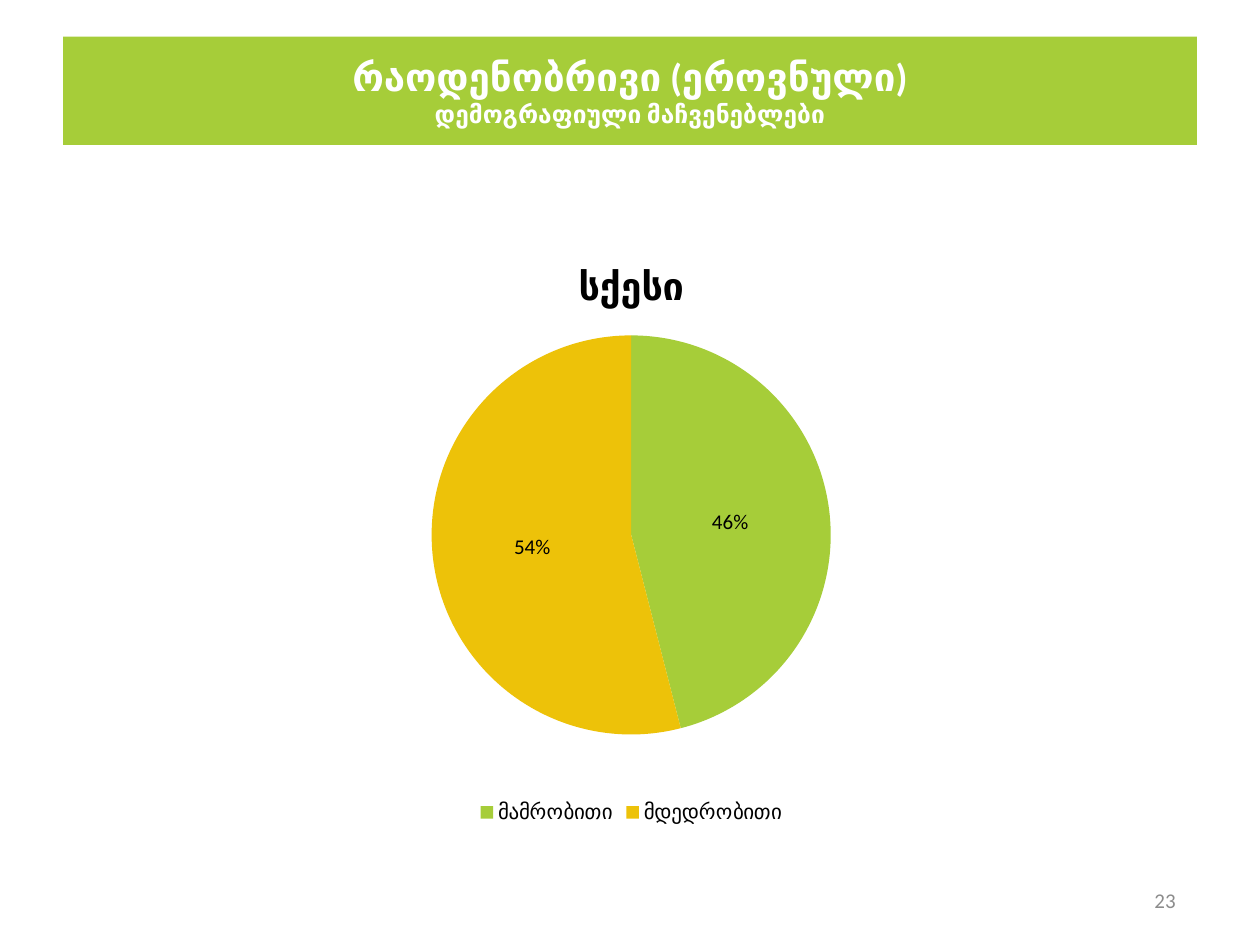
"""Build the slide showing the sex breakdown of the national survey."""
from dataclasses import dataclass

from lxml import etree
from pptx import Presentation
from pptx.chart.data import CategoryChartData
from pptx.dml.color import RGBColor
from pptx.enum import chart as ch, text
from pptx.oxml import ns
from pptx.util import Cm, Pt


@dataclass(frozen=True)
class Theme:
    font: str = "Calibri"
    green: str = "A6CD39"
    gold: str = "EDC209"
    white: str = "FFFFFF"
    black: str = "000000"
    grey: str = "8C8C8C"
    title: float = 22
    subtitle: float = 14
    chart_title: float = 21.6
    small: float = 12


@dataclass(frozen=True)
class Box:
    x: float
    y: float
    w: float
    h: float

    def emu(self) -> tuple:
        return Cm(self.x), Cm(self.y), Cm(self.w), Cm(self.h)


@dataclass(frozen=True)
class Slice:
    name: str
    percent: int
    color: str


THEME = Theme()
SLICES = [Slice("მამრობითი", 46, THEME.green), Slice("მდედრობითი", 54, THEME.gold)]


def set_font(font, size: float, color: str, bold: bool = False) -> None:
    font.name, font.size, font.bold = THEME.font, Pt(size), bold
    font.color.rgb = RGBColor.from_string(color)


def add_text(p, content: str, *, size: float, color: str, bold: bool = False,
             align=text.PP_ALIGN.CENTER) -> None:
    p.alignment = align
    r = p.add_run()
    r.text = content
    set_font(r.font, size, color, bold)


def fill(fmt, color: str) -> None:
    fmt.fill.solid()
    fmt.fill.fore_color.rgb = RGBColor.from_string(color)


def add_title(s, box: Box, heading: str, subheading: str) -> None:
    sp = s.shapes.title
    sp.left, sp.top, sp.width, sp.height = box.emu()
    fill(sp, THEME.green)
    tf = sp.text_frame
    tf.auto_size = text.MSO_AUTO_SIZE.NONE
    tf.vertical_anchor = text.MSO_ANCHOR.MIDDLE
    p = tf.paragraphs[0]
    add_text(p, heading, size=THEME.title, color=THEME.white, bold=True)
    p.add_line_break()
    add_text(p, subheading, size=THEME.subtitle, color=THEME.white, bold=True)


def add_page_number(s, box: Box, number: str) -> None:
    tf = s.shapes.add_textbox(*box.emu()).text_frame
    tf.word_wrap = True
    tf.vertical_anchor = text.MSO_ANCHOR.MIDDLE
    add_text(tf.paragraphs[0], number, size=THEME.small, color=THEME.grey,
             align=text.PP_ALIGN.RIGHT)


def place_plot(chart, area: Box) -> None:
    plot_area = chart._chartSpace.find(".//" + ns.qn("c:plotArea"))
    layout = plot_area.find(ns.qn("c:layout"))
    if layout is None:
        layout = etree.Element(ns.qn("c:layout"))
        plot_area.insert(0, layout)
    manual = etree.SubElement(layout, ns.qn("c:manualLayout"))
    settings = dict(layoutTarget="inner", xMode="edge", yMode="edge",
                    x=area.x, y=area.y, w=area.w, h=area.h)
    for tag, value in settings.items():
        etree.SubElement(manual, ns.qn(f"c:{tag}")).set("val", str(value))


def add_pie(s, box: Box, title: str, slices: list[Slice]) -> None:
    data = CategoryChartData(number_format="0")
    data.categories = [item.name for item in slices]
    data.add_series(title, [item.percent for item in slices])
    chart = s.shapes.add_chart(ch.XL_CHART_TYPE.PIE, *box.emu(), data).chart
    set_font(chart.font, THEME.small, THEME.black)
    chart.has_title = True
    add_text(chart.chart_title.text_frame.paragraphs[0], title,
             size=THEME.chart_title, color=THEME.black, bold=True)
    chart.has_legend = True
    chart.legend.position = ch.XL_LEGEND_POSITION.BOTTOM
    chart.legend.include_in_layout = False
    set_font(chart.legend.font, THEME.small, THEME.black)
    plot = chart.plots[0]
    plot.vary_by_categories = True
    for i, item in enumerate(slices):
        fill(plot.series[0].points[i].format, item.color)
    labels = plot.series[0].data_labels
    labels.show_value, labels.show_percentage = False, True
    labels.number_format, labels.number_format_is_linked = "0%", False
    labels.position = ch.XL_LABEL_POSITION.CENTER
    set_font(labels.font, THEME.small, THEME.black)
    place_plot(chart, Box(0.32, 0.17, 0.36, 0.67))


def main() -> None:
    prs = Presentation()
    prs.slide_width, prs.slide_height = Cm(25.4), Cm(19.05)
    s = prs.slides.add_slide(prs.slide_layouts[5])
    add_title(s, Box(1.27, 0.74, 22.86, 2.18),
              "რაოდენობრივი (ეროვნული)", "დემოგრაფიული მაჩვენებლები")
    add_page_number(s, Box(22.91, 17.63, 1.04, 1.02), "23")
    add_pie(s, Box(1.42, 4.72, 22.61, 12.01), "სქესი", SLICES)
    prs.save("out.pptx")


if __name__ == "__main__":
    main()
